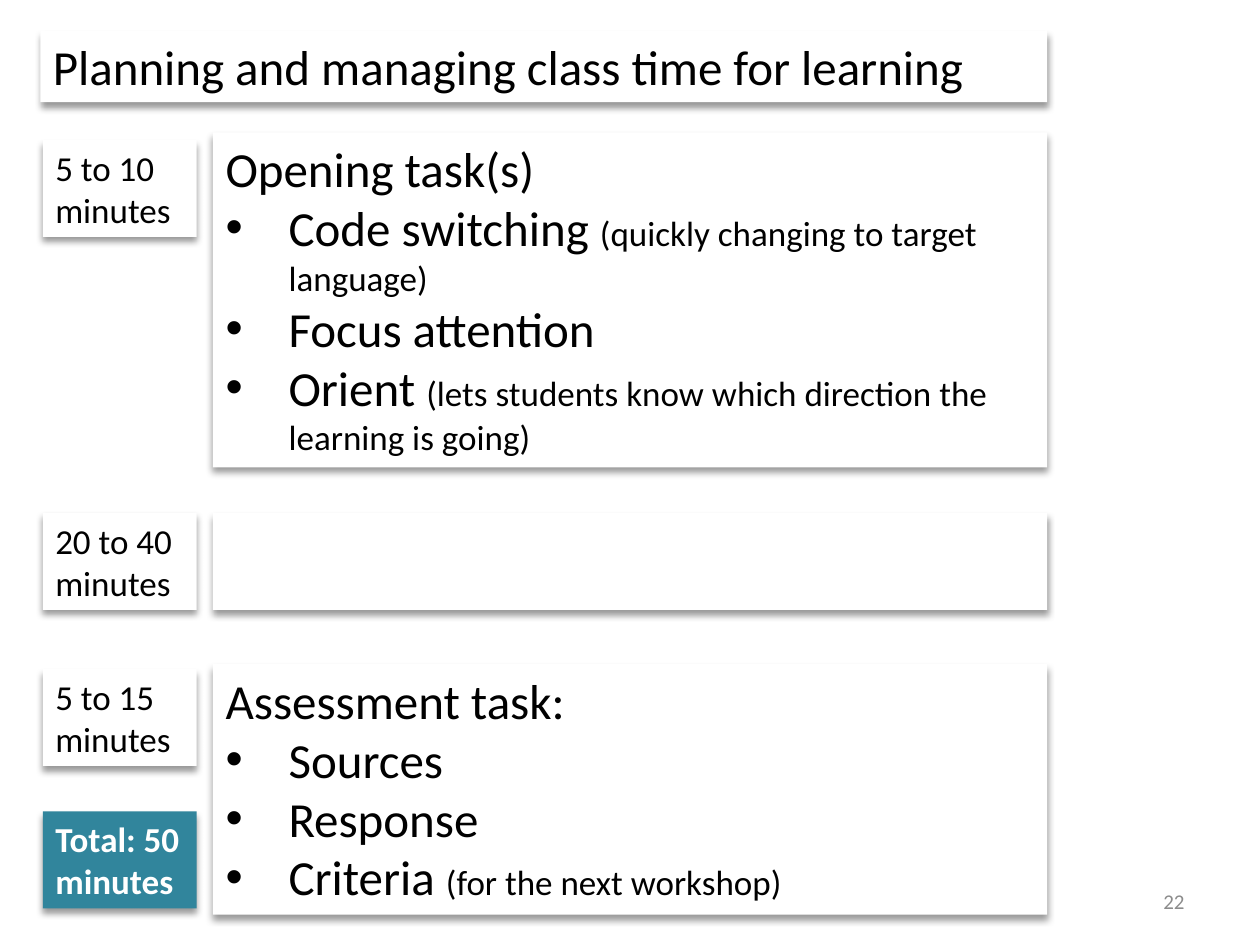
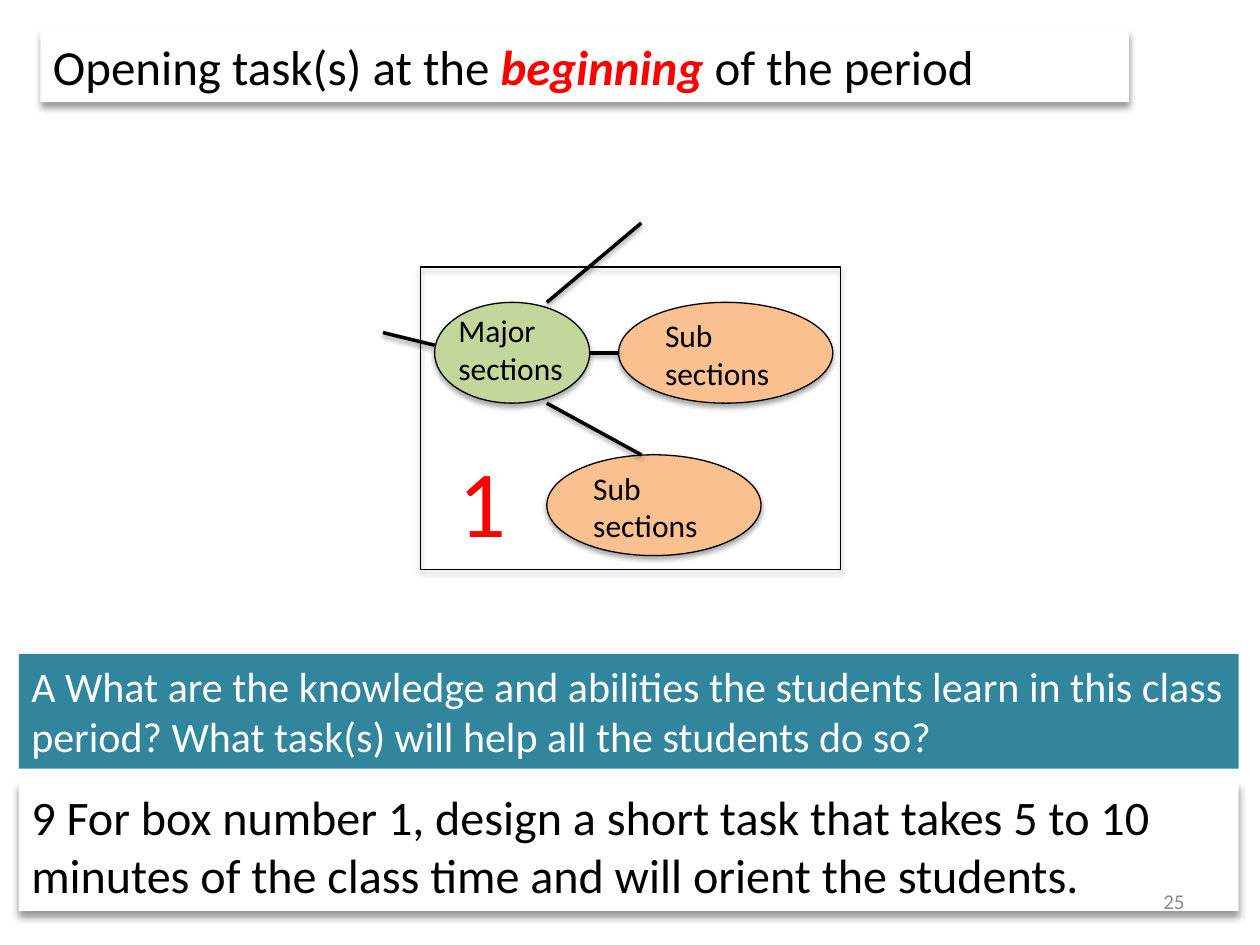
import lxml.etree
import pptx
import pptx.dml.color
import pptx.enum.shapes
import pptx.enum.text
import pptx.oxml.ns
import pptx.util

# Shared style
EMU_PER_PX = 9144  # 100 px to the inch
FONT = "Calibri"
BLACK, WHITE, RED, GREY = "000000", "FFFFFF", "FF0000", "8C8C8C"
TEAL, ORANGE, GREEN = "31859C", "FAC090", "C3D69B"
# Shadows: opacity %, blur pt, distance pt
CARD_SHADOW, SHAPE_SHADOW, LINE_SHADOW = (40, 4, 3), (35, 3.1, 1.8), (38, 3.1, 1.6)

PP_ALIGN = pptx.enum.text.PP_ALIGN
ANCHOR = pptx.enum.text.MSO_ANCHOR
AUTO_SIZE = pptx.enum.text.MSO_AUTO_SIZE
SHAPE = pptx.enum.shapes.MSO_SHAPE
qn = pptx.oxml.ns.qn


def px(*lengths):
    return [pptx.util.Emu(n * EMU_PER_PX) for n in lengths]


def rgb(value):
    return pptx.dml.color.RGBColor.from_string(value)


def add_xml(parent, tag, **attributes):
    return lxml.etree.SubElement(parent, qn(tag), {k: str(v) for k, v in attributes.items()})


def write(sp, paragraphs, size=28, color=BLACK, bold=False, italic=False,
          align=PP_ALIGN.LEFT, anchor=ANCHOR.TOP, grow=True, bulleted=False):
    """Fill a shape; a paragraph is a string or a list of (text, overrides) runs.

    With bulleted set, every paragraph after the heading gets a bullet.
    """
    tf = sp.text_frame
    tf.word_wrap = True
    tf.vertical_anchor = anchor
    tf.auto_size = AUTO_SIZE.SHAPE_TO_FIT_TEXT if grow else AUTO_SIZE.NONE
    for i, runs in enumerate(paragraphs):
        p = tf.add_paragraph() if i else tf.paragraphs[0]
        p.alignment = align
        p.space_before = pptx.util.Pt(0)
        pPr = p._p.get_or_add_pPr()
        is_item = bulleted and i > 0
        indent = px(50)[0] if is_item else 0
        pPr.set("marL", str(indent))
        pPr.set("indent", str(-indent))
        if is_item:
            add_xml(pPr, "a:buFont", typeface="Arial")
            add_xml(pPr, "a:buChar", char="•")
        else:
            add_xml(pPr, "a:buNone")
        for text, changes in [(runs, {})] if isinstance(runs, str) else runs:
            style = {"size": size, "color": color, "bold": bold, "italic": italic, **changes}
            r = p.add_run()
            r.text = text
            r.font.name = FONT
            r.font.size = pptx.util.Pt(style["size"])
            r.font.color.rgb = rgb(style["color"])
            r.font.bold, r.font.italic = style["bold"], style["italic"]


class Deck:
    """Holds the presentation, its style and the current slide."""

    def __init__(self):
        self.prs = pptx.Presentation()
        self.prs.slide_width, self.prs.slide_height = px(1000, 750)
        self.slide = None

    def new_slide(self, layout_name, title, title_width):
        layout = self.prs.slide_layouts.get_by_name(layout_name)
        self.slide = self.prs.slides.add_slide(layout)
        self.placeholder(0, 32, 24, title_width, 57, [title])

    def page_number(self, number):
        self.label(717, 695, 233, 40, [number], size=12, color=GREY,
                   align=PP_ALIGN.RIGHT, anchor=ANCHOR.MIDDLE, grow=False)

    def decorate(self, sp, fill=None, line=None, shadow=None):
        if fill:
            sp.fill.solid()
            sp.fill.fore_color.rgb = rgb(fill)
        else:
            sp.fill.background()
        if line:
            sp.line.color.rgb = rgb(line)
            sp.line.width = pptx.util.Pt(0.75)
        else:
            sp.line.fill.background()
        self.shadow(sp, shadow)

    def shadow(self, sp, shadow):
        effects = add_xml(sp._element.spPr, "a:effectLst")
        if shadow:
            opacity, blur, distance = shadow
            outer = add_xml(effects, "a:outerShdw", blurRad=pptx.util.Pt(blur),
                            dist=pptx.util.Pt(distance), dir=90 * 60000, rotWithShape=0)
            color = add_xml(outer, "a:srgbClr", val=BLACK)
            add_xml(color, "a:alpha", val=opacity * 1000)

    def placeholder(self, idx, x, y, w, h, paragraphs, **style):
        sp = self.slide.placeholders[idx]
        sp.left, sp.top, sp.width, sp.height = px(x, y, w, h)
        self.decorate(sp, WHITE, shadow=CARD_SHADOW)
        write(sp, paragraphs, grow=False, **style)

    def shape(self, kind, x, y, w, h, fill=None, line=BLACK, shadow=SHAPE_SHADOW):
        sp = self.slide.shapes.add_shape(kind, *px(x, y, w, h))
        self.decorate(sp, fill, line, shadow)
        return sp

    def card(self, x, y, w, h, text=None, fill=WHITE, shadow=CARD_SHADOW, **style):
        sp = self.shape(SHAPE.RECTANGLE, x, y, w, h, fill, None, shadow)
        if text:
            write(sp, [text], **style)

    def label(self, x, y, w, h, paragraphs, **style):
        write(self.slide.shapes.add_textbox(*px(x, y, w, h)), paragraphs, **style)

    def line(self, x1, y1, x2, y2):
        straight = pptx.enum.shapes.MSO_CONNECTOR.STRAIGHT
        sp = self.slide.shapes.add_connector(straight, *px(x1, y1, x2, y2))
        sp.line.color.rgb = rgb(BLACK)
        sp.line.width = pptx.util.Pt(2)
        self.shadow(sp, LINE_SHADOW)


def class_time_slide(deck):
    deck.new_slide("Two Content", "Planning and managing class time for learning", 799)
    small = {"size": 20}

    # Task lists
    task_x, task_w = 169, 662
    deck.placeholder(1, task_x, 105, task_w, 266, [
        "Opening task(s)",
        [("Code switching ", {}), ("(quickly changing to target language)", small)],
        "Focus attention",
        [("Orient ", {}),
         ("(lets students know which direction the learning is going)", small)],
    ], bulleted=True)
    deck.placeholder(2, task_x, 527, task_w, 199, [
        "Assessment task:",
        "Sources",
        "Response",
        [("Criteria ", {}), ("(for the next workshop)", small)],
    ], bulleted=True)

    # Time column
    time_x, time_w, time_h = 34, 122, 77
    for y, text in [(111, "5 to 10 minutes"), (407, "20 to 40 minutes"),
                    (531, "5 to 15 minutes")]:
        deck.card(time_x, y, time_w, time_h, text, size=20)
    deck.card(time_x, 644, time_w, time_h, "Total: 50 minutes", TEAL,
              size=20, color=WHITE, bold=True)

    # Empty middle task
    deck.card(task_x, 407, task_w, time_h)
    deck.page_number("22")


def opening_task_slide(deck):
    title = [("Opening task(s) at the ", {}),
             ("beginning ", {"color": RED, "bold": True, "italic": True}),
             ("of the period", {})]
    deck.new_slide("Title Only", title, 864)

    # Section map
    sub_sections = [(491, 240), (434, 361)]
    for x, y in sub_sections:
        deck.shape(SHAPE.OVAL, x, y, 170, 80, ORANGE)
    for ends in [(464, 280, 491, 280), (434, 240, 509, 177),
                 (434, 320, 509, 361), (304, 264, 345, 274)]:
        deck.line(*ends)
    deck.shape(SHAPE.OVAL, 345, 240, 123, 80, GREEN)
    deck.label(354, 242, 106, 71, ["Major sections"], size=18)
    for x, y in sub_sections:
        deck.label(x + 27, y + 6, 106, 71, ["Sub", "sections"], size=18)

    # Numbered frame
    deck.shape(SHAPE.RECTANGLE, 334, 212, 333, 240)
    deck.label(354, 347, 74, 101, ["1"], size=54, color=RED)

    # Task and question
    deck.card(15, 620, 968, 103,
              "9 For box number 1, design a short task that takes 5 to 10 minutes "
              "of the class time and will orient the students.", size=27.5)
    deck.card(15, 519, 968, 91,
              "A What are the knowledge and abilities the students learn in this class "
              "period? What task(s) will help all the students do so?",
              TEAL, None, size=24, color=WHITE)
    deck.page_number("25")


def main():
    deck = Deck()
    class_time_slide(deck)
    opening_task_slide(deck)
    deck.prs.save("out.pptx")


if __name__ == "__main__":
    main()
